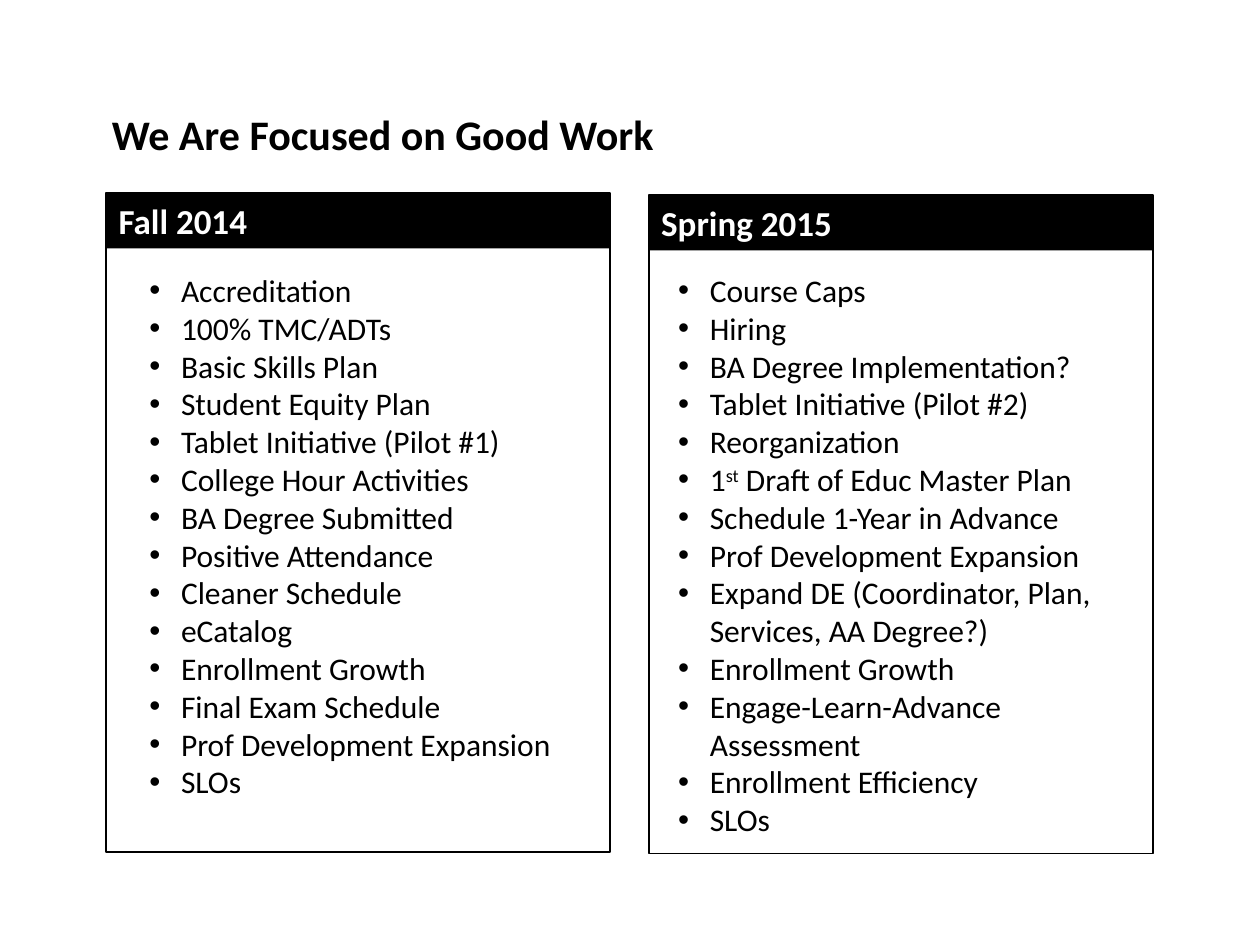
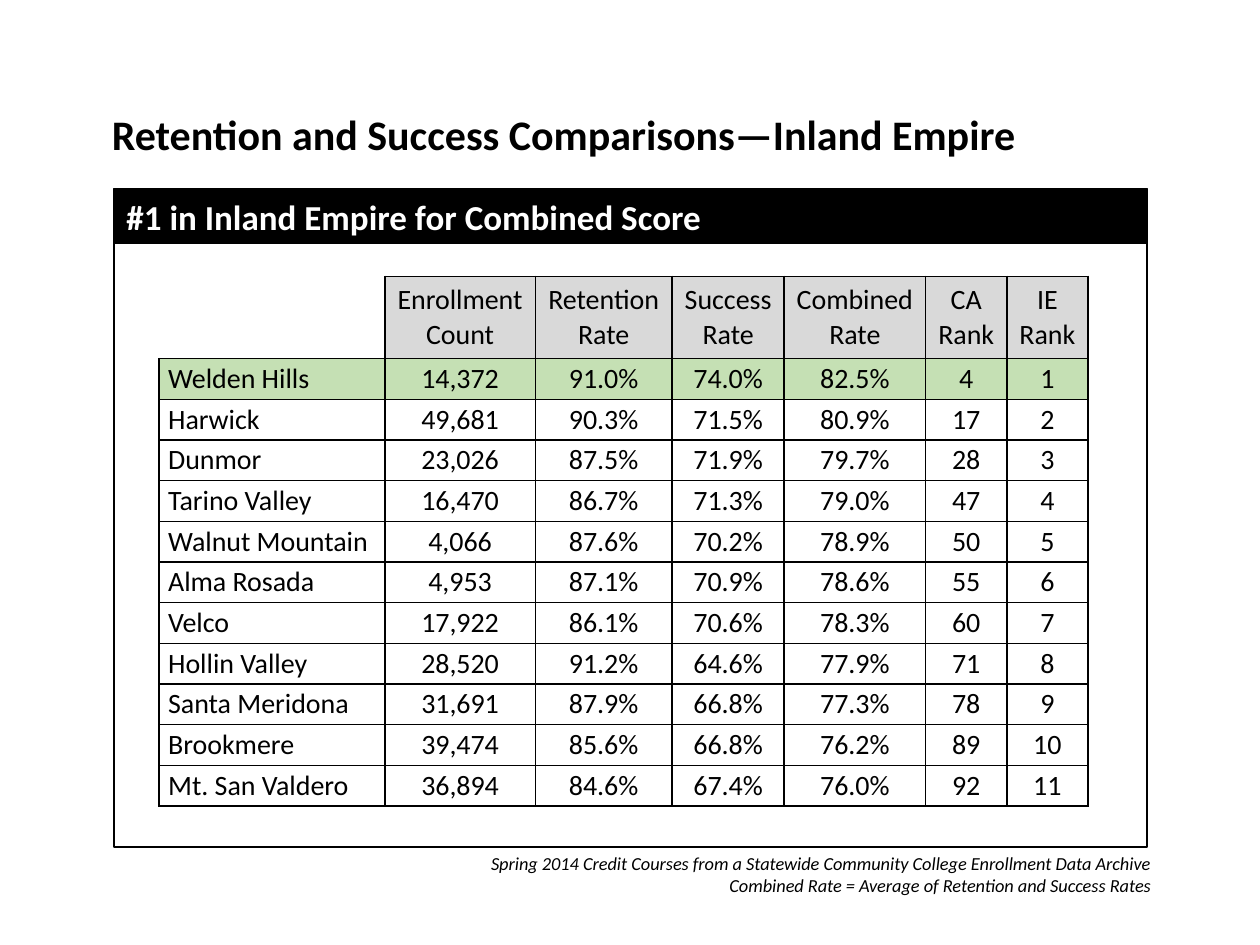
from lxml.etree import SubElement
from pptx import Presentation
from pptx.dml.color import RGBColor as Rgb
from pptx.enum.shapes import MSO_SHAPE as Shape
from pptx.enum.text import MSO_ANCHOR as Anchor, MSO_AUTO_SIZE as Fit, PP_ALIGN as Align
from pptx.oxml import parse_xml
from pptx.oxml.ns import nsdecls, qn
from pptx.util import Cm, Pt

FONT = "Calibri"
HUES = {"ink": "000000", "paper": "FFFFFF", "head": "D9D9D9", "top": "C5E0B4"}
BAND, PANEL = 1.12, 13.28  # heights of a panel's heading and of its frame

FALL = ["Accreditation", "100% TMC/ADTs", "Basic Skills Plan", "Student Equity Plan",
        "Tablet Initiative (Pilot #1)", "College Hour Activities", "BA Degree Submitted",
        "Positive Attendance", "Cleaner Schedule", "eCatalog", "Enrollment Growth",
        "Final Exam Schedule", "Prof Development Expansion", "SLOs"]
SPRING = ["Course Caps", "Hiring", "BA Degree Implementation?", "Tablet Initiative (Pilot #2)",
          "Reorganization", "1^st^ Draft of Educ Master Plan", "Schedule 1-Year in Advance",
          "Prof Development Expansion", "Expand DE (Coordinator, Plan, Services, AA Degree?)",
          "Enrollment Growth", "Engage-Learn-Advance Assessment", "Enrollment Efficiency",
          "SLOs"]

WIDTHS = [4.55, 3.03, 2.76, 2.26, 2.85, 1.64, 1.63]
HEADS = ["", "Enrollment\nCount", "Retention\nRate", "Success\nRate", "Combined\nRate",
         "CA\nRank", "IE\nRank"]
RATES = [
    ["Welden Hills", "14,372", "91.0%", "74.0%", "82.5%", "4", "1"],
    ["Harwick", "49,681", "90.3%", "71.5%", "80.9%", "17", "2"],
    ["Dunmor", "23,026", "87.5%", "71.9%", "79.7%", "28", "3"],
    ["Tarino Valley", "16,470", "86.7%", "71.3%", "79.0%", "47", "4"],
    ["Walnut Mountain", "4,066", "87.6%", "70.2%", "78.9%", "50", "5"],
    ["Alma Rosada", "4,953", "87.1%", "70.9%", "78.6%", "55", "6"],
    ["Velco", "17,922", "86.1%", "70.6%", "78.3%", "60", "7"],
    ["Hollin Valley", "28,520", "91.2%", "64.6%", "77.9%", "71", "8"],
    ["Santa Meridona", "31,691", "87.9%", "66.8%", "77.3%", "78", "9"],
    ["Brookmere", "39,474", "85.6%", "66.8%", "76.2%", "89", "10"],
    ["Mt. San Valdero", "36,894", "84.6%", "67.4%", "76.0%", "92", "11"],
]


def hue(name):
    return Rgb.from_string(HUES[name])


def write(frame, lines, size=18, color="ink", bold=False, italic=False,
          align=Align.LEFT, bullet=False):
    """Fill a text frame with paragraphs; text between ^ marks is raised."""
    for i, line in enumerate(lines):
        para = frame.add_paragraph() if i else frame.paragraphs[0]
        para.alignment = align
        if bullet:
            mark(para)
        for j, part in enumerate(line.split("^")):
            run = para.add_run()
            run.text = part
            font = run.font
            font.name, font.size = FONT, Pt(size)
            font.bold, font.italic = bold, italic
            font.color.rgb = hue(color)
            if j % 2:
                run._r.get_or_add_rPr().set("baseline", "30000")


def mark(para):
    """Give a paragraph a hanging bullet."""
    props = para._p.get_or_add_pPr()
    props.set("marL", str(Cm(0.64)))
    props.set("indent", str(-Cm(0.64)))
    SubElement(props, qn("a:buFont"), typeface="Arial")
    SubElement(props, qn("a:buChar"), char="•")


def add_page(deck, title, width, height):
    """Add a title-only slide and format its title."""
    page = deck.slides.add_slide(deck.slide_layouts[5])
    head = page.shapes.title
    head.left, head.top = Cm(2), Cm(2.06)
    head.width, head.height = Cm(width), Cm(height)
    frame = head.text_frame
    frame.auto_size, frame.vertical_anchor = Fit.NONE, Anchor.TOP
    write(frame, [title], size=24, bold=True)
    return page


def add_rect(page, x, y, w, h):
    rect = page.shapes.add_shape(Shape.RECTANGLE, Cm(x), Cm(y), Cm(w), Cm(h))
    rect.shadow.inherit = False
    return rect


def add_panel(page, head, x, y, w):
    """Draw a black heading band and the outlined frame around it."""
    band = add_rect(page, x, y, w, BAND)
    band.fill.solid()
    band.fill.fore_color.rgb = hue("ink")
    band.line.fill.background()
    write(band.text_frame, [head], size=20, color="paper", bold=True)
    box = add_rect(page, x, y, w, PANEL)
    box.fill.background()
    box.line.color.rgb = hue("ink")
    box.line.width = Pt(1)


def add_text(page, lines, x, y, w, h, **style):
    frame = page.shapes.add_textbox(Cm(x), Cm(y), Cm(w), Cm(h)).text_frame
    frame.word_wrap = True
    write(frame, lines, **style)


def add_edges(cell, shown="LRTB"):
    """Set the four cell borders; those not shown get no line."""
    props = cell._tc.get_or_add_tcPr()
    for i, side in enumerate("LRTB"):
        paint = (f'<a:solidFill><a:srgbClr val="{HUES["ink"]}"/></a:solidFill>'
                 if side in shown else "<a:noFill/>")
        props.insert(i, parse_xml(
            f'<a:ln{side} {nsdecls("a")} w="{Pt(1)}">{paint}</a:ln{side}>'))


def add_cell(cell, text, row, col):
    cell.margin_left = cell.margin_right = Cm(0.18)
    cell.margin_top = cell.margin_bottom = 0
    cell.vertical_anchor = Anchor.MIDDLE
    blank = not text
    fill = None if blank else {0: "head", 1: "top"}.get(row)
    if fill:
        cell.fill.solid()
        cell.fill.fore_color.rgb = hue(fill)
    else:
        cell.fill.background()
    add_edges(cell, "RB" if blank else "LRTB")
    if not blank:
        write(cell.text_frame, text.split("\n"), size=16,
              align=Align.CENTER if col else Align.LEFT)


def add_grid(page, rows, x, y):
    """Add the table: a tall heading row, then equal rows."""
    high = [1.66] + [0.82] * (len(rows) - 1)
    grid = page.shapes.add_table(len(rows), len(WIDTHS), Cm(x), Cm(y),
                                 Cm(sum(WIDTHS)), Cm(sum(high))).table
    grid.first_row = grid.horz_banding = False
    for col, width in zip(grid.columns, WIDTHS):
        col.width = Cm(width)
    for i, row in enumerate(rows):
        grid.rows[i].height = Cm(high[i])
        for j, text in enumerate(row):
            add_cell(grid.cell(i, j), text, i, j)


def main():
    deck = Presentation()
    deck.slide_width, deck.slide_height = Cm(25.4), Cm(19.05)

    # Work of the two terms
    page = add_page(deck, "We Are Focused on Good Work", 16.76, 1.27)
    add_panel(page, "Fall 2014", 2.14, 3.89, 10.16)
    add_panel(page, "Spring 2015", 13.08, 3.93, 10.16)
    add_text(page, FALL, 2.76, 5.34, 9.09, 11.02, bullet=True)
    add_text(page, SPRING, 13.42, 5.34, 9.45, 11.79, bullet=True)

    # Comparison of colleges
    page = add_page(deck, "Retention and Success Comparisons—Inland Empire", 21.13, 2.31)
    add_panel(page, "#1 in Inland Empire for Combined Score", 2.3, 3.8, 20.83)
    add_grid(page, [HEADS] + RATES, 3.21, 5.57)
    add_text(page, ["Spring 2014 Credit Courses from a Statewide Community College "
                    "Enrollment Data Archive",
                    "Combined Rate = Average of Retention and Success Rates"],
             6.85, 17.06, 16.61, 1.14, size=10.5, italic=True, align=Align.RIGHT)

    deck.save("out.pptx")


if __name__ == "__main__":
    main()
